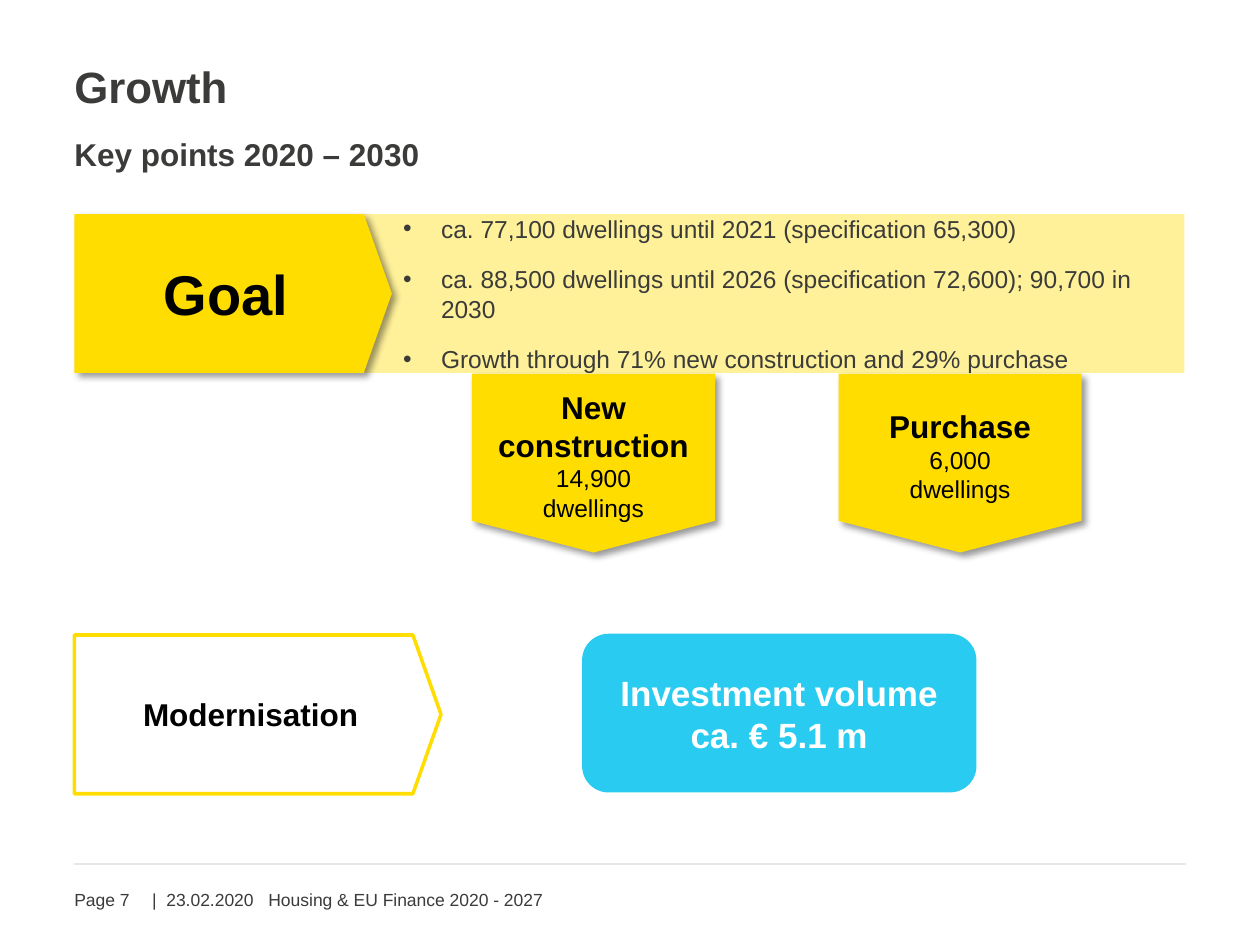
"""Build the growth slide with its goal, its two sources of dwellings and the investment."""
from dataclasses import dataclass
from typing import Any, Optional

from lxml.etree import SubElement
from pptx import Presentation
from pptx.dml.color import RGBColor
from pptx.enum.dml import MSO_FILL
from pptx.enum.shapes import MSO_CONNECTOR, MSO_SHAPE
from pptx.enum.text import MSO_ANCHOR, MSO_AUTO_SIZE, PP_ALIGN
from pptx.oxml.ns import qn
from pptx.util import Inches, Pt

HUES = {
    "text": "3B3B3A",
    "black": "000000",
    "white": "FFFFFF",
    "gold": "FFDD00",
    "pale": "FFF199",
    "blue": "29CCF0",
    "rule": "E6E6E6",
}
LEFT, RIGHT = 0.59, 9.41
FOOT, DEEP = 6.98, 0.24
TIGHT = (0.04, 0.04, 0.04, 0.04)
WIDE = (0.1, 0.05, 0.1, 0.05)


@dataclass(frozen=True)
class Line:
    text: str
    size: int
    bold: bool = False


@dataclass(frozen=True)
class Block:
    kind: MSO_SHAPE
    box: tuple[float, float, float, float]
    lines: tuple[Line, ...]
    fill: Optional[str] = None
    edge: Optional[str] = None
    hue: str = "black"
    pads: tuple[float, float, float, float] = TIGHT
    shade: bool = False
    down: bool = False


@dataclass(frozen=True)
class Label:
    box: tuple[float, float, float, float]
    line: Line
    pads: tuple[float, float, float, float] = (0, 0, 0, 0)
    anchor: MSO_ANCHOR = MSO_ANCHOR.BOTTOM
    align: PP_ALIGN = PP_ALIGN.LEFT


def arrow(x: float, lines: tuple[Line, ...]) -> Block:
    """Describe a gold arrow that points down from the goal band."""
    return Block(MSO_SHAPE.PENTAGON, (x, 2.71, 1.42, 1.93), lines,
                 fill="gold", shade=True, down=True)


GOALS = (
    Line("ca. 77,100 dwellings until 2021 (specification 65,300)", 14),
    Line("ca. 88,500 dwellings until 2026 (specification 72,600); 90,700 in 2030", 14),
    Line("Growth through 71% new construction and 29% purchase", 14),
)
BLOCKS = (
    Block(MSO_SHAPE.PENTAGON, (LEFT, 1.7, 2.52, 1.26), (Line("Goal", 32, True),),
          fill="gold", shade=True),
    arrow(6.91, (Line("Purchase", 18, True), Line("6,000", 14), Line("dwellings", 14))),
    arrow(4, (Line("New construction", 18, True), Line("14,900", 14), Line("dwellings", 14))),
    Block(MSO_SHAPE.PENTAGON, (LEFT, 5.04, 2.91, 1.26), (Line("Modernisation", 18, True),),
          edge="gold"),
    Block(MSO_SHAPE.FLOWCHART_ALTERNATE_PROCESS, (4.62, 5.03, 3.13, 1.26),
          (Line("Investment volume", 20, True), Line("ca. € 5.1 m", 20, True)),
          fill="blue", hue="white", pads=WIDE),
)
LABELS = (
    Label((LEFT, 1.03, 7.32, 0.71), Line("Key points 2020 – 2030", 18, True),
          (0, 0.04, 0, 0), MSO_ANCHOR.TOP),
    Label((LEFT, FOOT, 0.55, DEEP), Line("Page 7", 10)),
    Label((1.14, FOOT, 0.94, DEEP), Line("|  23.02.2020", 10), align=PP_ALIGN.CENTER),
    Label((2.09, FOOT, 4.72, DEEP), Line("Housing & EU Finance 2020 - 2027", 10),
          (0.04, 0, 0, 0)),
)


def tint(name: str) -> RGBColor:
    """Look up a colour by name."""
    return RGBColor.from_string(HUES[name])


def apply(item: Any, style: dict[str, Any]) -> None:
    """Set each attribute of an item from a dict."""
    for key, value in style.items():
        setattr(item, key, value)


def place(shape: Any, box: tuple[float, float, float, float]) -> None:
    """Move and size a shape."""
    apply(shape, dict(zip(("left", "top", "width", "height"), map(Inches, box))))


def write(shape: Any, lines: tuple[Line, ...], hue: str, align: PP_ALIGN,
          anchor: MSO_ANCHOR, pads: tuple[float, float, float, float]) -> None:
    """Fill a shape with one paragraph per line."""
    frame = shape.text_frame
    sides = ("margin_left", "margin_top", "margin_right", "margin_bottom")
    apply(frame, {"word_wrap": True, "auto_size": MSO_AUTO_SIZE.NONE,
                  "vertical_anchor": anchor, **dict(zip(sides, map(Inches, pads)))})
    for spot, line in enumerate(lines):
        para = frame.add_paragraph() if spot else frame.paragraphs[0]
        apply(para, {"alignment": align, "space_before": Pt(0)})
        run = para.add_run()
        run.text = line.text
        apply(run.font, {"name": "Arial", "size": Pt(line.size), "bold": line.bold})
        run.font.color.rgb = tint(hue)


def shade(shape: Any) -> None:
    """Give a shape a soft shadow to the lower right."""
    glow = SubElement(shape.element.spPr.find(qn("a:effectLst")), qn("a:outerShdw"),
                      blurRad=str(Pt(4)), dist=str(Pt(3)), dir="2700000",
                      algn="tl", rotWithShape="0")
    tone = SubElement(glow, qn("a:srgbClr"), val=HUES["black"])
    SubElement(tone, qn("a:alpha"), val="40000")


def draw(slide: Any, block: Block) -> None:
    """Draw a block with its text."""
    shape = slide.shapes.add_shape(block.kind, *map(Inches, block.box))
    shape.shadow.inherit = False
    if block.kind == MSO_SHAPE.PENTAGON:
        shape.adjustments[0] = 0.177
    for part, hue in ((shape.fill, block.fill), (shape.line.fill, block.edge)):
        if hue:
            part.solid()
            part.fore_color.rgb = tint(hue)
        else:
            part.background()
    if shape.line.fill.type == MSO_FILL.SOLID:
        shape.line.width = Pt(2)
    if block.shade:
        shade(shape)
    write(shape, block.lines, block.hue, PP_ALIGN.CENTER, MSO_ANCHOR.MIDDLE, block.pads)
    if block.down:
        shape.rotation = 90
        shape.text_frame._txBody.bodyPr.set("vert", "vert270")


def note(slide: Any, label: Label) -> None:
    """Add a plain line of text."""
    shape = slide.shapes.add_textbox(*map(Inches, label.box))
    write(shape, (label.line,), "text", label.align, label.anchor, label.pads)


def head(slide: Any) -> None:
    """Set the title."""
    title = slide.shapes.title
    place(title, (LEFT, 0.52, 7.32, 0.79))
    write(title, (Line("Growth", 25, True),), "text", PP_ALIGN.LEFT,
          MSO_ANCHOR.TOP, (0, 0, 0, 0))
    title.text_frame.paragraphs[0].line_spacing = 0.9


def band(slide: Any) -> None:
    """Set the list of goals on its pale band."""
    body = slide.placeholders[1]
    place(body, (2.71, 1.7, 6.69, 1.26))
    body.fill.solid()
    body.fill.fore_color.rgb = tint("pale")
    write(body, GOALS, "text", PP_ALIGN.LEFT, MSO_ANCHOR.MIDDLE, WIDE)
    for spot, para in enumerate(body.text_frame.paragraphs):
        props = para._p.get_or_add_pPr()
        apply(para, {"space_before": Pt(12 if spot else 0)})
        props.set("marL", str(Inches(0.69)))
        props.set("indent", str(Inches(-0.3)))
        SubElement(props, qn("a:buChar"), char="•")


def rule(slide: Any) -> None:
    """Draw the line above the footer."""
    line = slide.shapes.add_connector(
        MSO_CONNECTOR.STRAIGHT, *map(Inches, (LEFT, 6.86, RIGHT, 6.86)))
    line.line.color.rgb = tint("rule")
    line.line.width = Pt(1)
    SubElement(line.element.spPr, qn("a:effectLst"))


def main() -> None:
    """Build and save the slide."""
    deck = Presentation()
    apply(deck, {"slide_width": Inches(10), "slide_height": Inches(7.5)})
    slide = deck.slides.add_slide(deck.slide_layouts[1])
    head(slide)
    band(slide)
    rule(slide)
    for block in BLOCKS:
        draw(slide, block)
    for label in LABELS:
        note(slide, label)
    deck.save("out.pptx")


if __name__ == "__main__":
    main()
